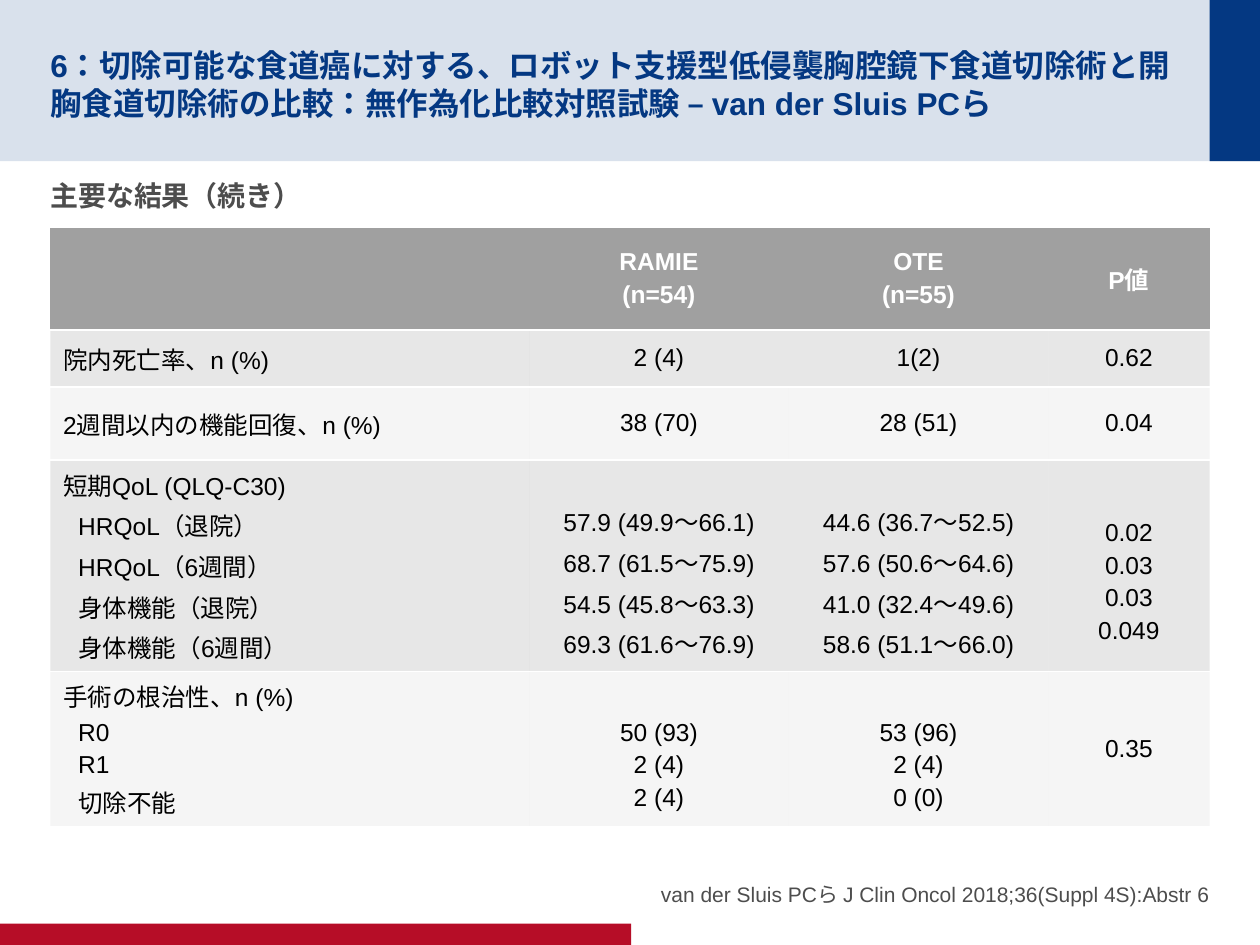
from lxml.etree import SubElement
from pptx import Presentation
from pptx.dml.color import RGBColor
from pptx.enum.lang import MSO_LANGUAGE_ID as Language
from pptx.enum.shapes import MSO_SHAPE as Shape
from pptx.enum.text import MSO_ANCHOR as Anchor, PP_ALIGN as Align
from pptx.oxml.ns import qn
from pptx.util import Inches, Pt

COLORS = {"blue": "043882", "red": "B60D27", "gray": "A0A0A0",
          "text": "4D4D4D", "black": "000000", "white": "FFFFFF"}

BANDS = [
    (0, 0, 10, 1.28, "blue", 15),
    (9.6, 0, 0.4, 1.28, "blue", 100),
    (0, 7.33, 5.01, 0.17, "red", 100),
]

TITLE = ("6：切除可能な食道癌に対する、ロボット支援型低侵襲胸腔鏡下食道切除術と"
         "開胸食道切除術の比較：無作為化比較対照試験 – van der Sluis PCら")
SUBTITLE = "主要な結果（続き）"
CITATION = "van der Sluis PCら J Clin Oncol 2018;36(Suppl 4S):Abstr 6"

COLUMN_WIDTHS = [3.8, 2.06, 2.06, 1.28]
ROW_HEIGHTS = [0.82, 0.45, 0.58, 1.68, 1.23]
ROW_OPACITY = [100, 25, 10, 25, 10]
ROWS = [
    [[], ["RAMIE", "(n=54)"], ["OTE", "(n=55)"], ["P値"]],
    [["院内死亡率、n (%)"], ["2 (4)"], ["1(2)"], ["0.62"]],
    [["2週間以内の機能回復、n (%)"], ["38 (70)"], ["28 (51)"], ["0.04"]],
    [["短期QoL (QLQ-C30)", "HRQoL（退院）", "HRQoL（6週間）",
      "身体機能（退院）", "身体機能（6週間）"],
     ["57.9 (49.9～66.1)", "68.7 (61.5～75.9)", "54.5 (45.8～63.3)", "69.3 (61.6～76.9)"],
     ["44.6 (36.7～52.5)", "57.6 (50.6～64.6)", "41.0 (32.4～49.6)", "58.6 (51.1～66.0)"],
     ["0.02", "0.03", "0.03", "0.049"]],
    [["手術の根治性、n (%)", "R0", "R1", "切除不能"],
     ["50 (93)", "2 (4)", "2 (4)"], ["53 (96)", "2 (4)", "0 (0)"], ["0.35"]],
]
CELL_MARGIN = 0.05
GROUP_HEADING_HEIGHT = 0.26


def paint(fill, color, opacity, parent):
    fill.solid()
    fill.fore_color.rgb = RGBColor.from_string(COLORS[color])
    if opacity < 100:
        color_node = parent.find(qn("a:solidFill"))[0]
        SubElement(color_node, qn("a:alpha"), val=str(opacity * 1000))


def style(paragraph, size, color, bold=False, align=Align.LEFT):
    paragraph.alignment = align
    font = paragraph.font
    font.name, font.size, font.bold = "Arial", Pt(size), bold
    font.color.rgb = RGBColor.from_string(COLORS[color])
    for run in paragraph.runs:
        run.font.language_id = Language.JAPANESE


def add_text(slide, text, box, anchor, margins, **look):
    frame = slide.shapes.add_textbox(*map(Inches, box)).text_frame
    frame.word_wrap = True
    frame.vertical_anchor = anchor
    frame.margin_left = frame.margin_right = 0
    frame.margin_top, frame.margin_bottom = map(Inches, margins)
    paragraph = frame.paragraphs[0]
    paragraph.text = text
    style(paragraph, **look)


def set_borders(properties):
    for side in ("lnL", "lnR"):
        SubElement(SubElement(properties, qn(f"a:{side}"), w="0"), qn("a:noFill"))
    for side in ("lnT", "lnB"):
        line = SubElement(properties, qn(f"a:{side}"), w=str(Pt(1)))
        fill = SubElement(line, qn("a:solidFill"))
        SubElement(fill, qn("a:srgbClr"), val=COLORS["white"])


def fill_cell(cell, lines, row, column):
    properties = cell._tc.get_or_add_tcPr()
    set_borders(properties)
    paint(cell.fill, "gray", ROW_OPACITY[row], properties)
    cell.vertical_anchor = Anchor.MIDDLE
    is_header, is_label = row == 0, column == 0
    if not is_header and not is_label and len(lines) > 1:
        cell.margin_top = Inches(CELL_MARGIN + GROUP_HEADING_HEIGHT)
    cell.text = "\n".join(lines)
    for index, paragraph in enumerate(cell.text_frame.paragraphs):
        style(paragraph, 14, "white" if is_header else "black", is_header,
              Align.LEFT if is_label else Align.CENTER)
        paragraph.space_before = Pt(2.8)
        if is_label and index > 0:
            indent = paragraph._p.get_or_add_pPr()
            indent.set("marL", str(Inches(0.12)))
            indent.set("indent", "0")


def add_results(slide):
    table = slide.shapes.add_table(
        len(ROWS), len(COLUMN_WIDTHS), Inches(0.4), Inches(1.8),
        Inches(sum(COLUMN_WIDTHS)), Inches(sum(ROW_HEIGHTS))).table
    table.horz_banding = False
    for column, width in zip(table.columns, COLUMN_WIDTHS):
        column.width = Inches(width)
    for row, height in enumerate(ROW_HEIGHTS):
        table.rows[row].height = Inches(height)
        for column, lines in enumerate(ROWS[row]):
            fill_cell(table.cell(row, column), lines, row, column)


def main():
    presentation = Presentation()
    presentation.slide_width, presentation.slide_height = Inches(10), Inches(7.5)
    slide = presentation.slides.add_slide(presentation.slide_layouts[6])

    for *box, color, opacity in BANDS:
        band = slide.shapes.add_shape(Shape.RECTANGLE, *map(Inches, box))
        band.shadow.inherit = False
        band.line.fill.background()
        paint(band.fill, color, opacity, band._element.spPr)

    add_text(slide, TITLE, (0.4, 0.2, 9.01, 0.88), Anchor.MIDDLE, (0.05, 0),
             size=18, color="blue", bold=True)
    add_text(slide, SUBTITLE, (0.4, 1.37, 9.2, 0.4), Anchor.TOP, (0.05, 0.05),
             size=16, color="text", bold=True)
    add_text(slide, CITATION, (4.94, 6.67, 4.66, 0.53), Anchor.BOTTOM, (0, 0),
             size=12, color="text", align=Align.RIGHT)
    add_results(slide)
    presentation.save("out.pptx")


if __name__ == "__main__":
    main()
